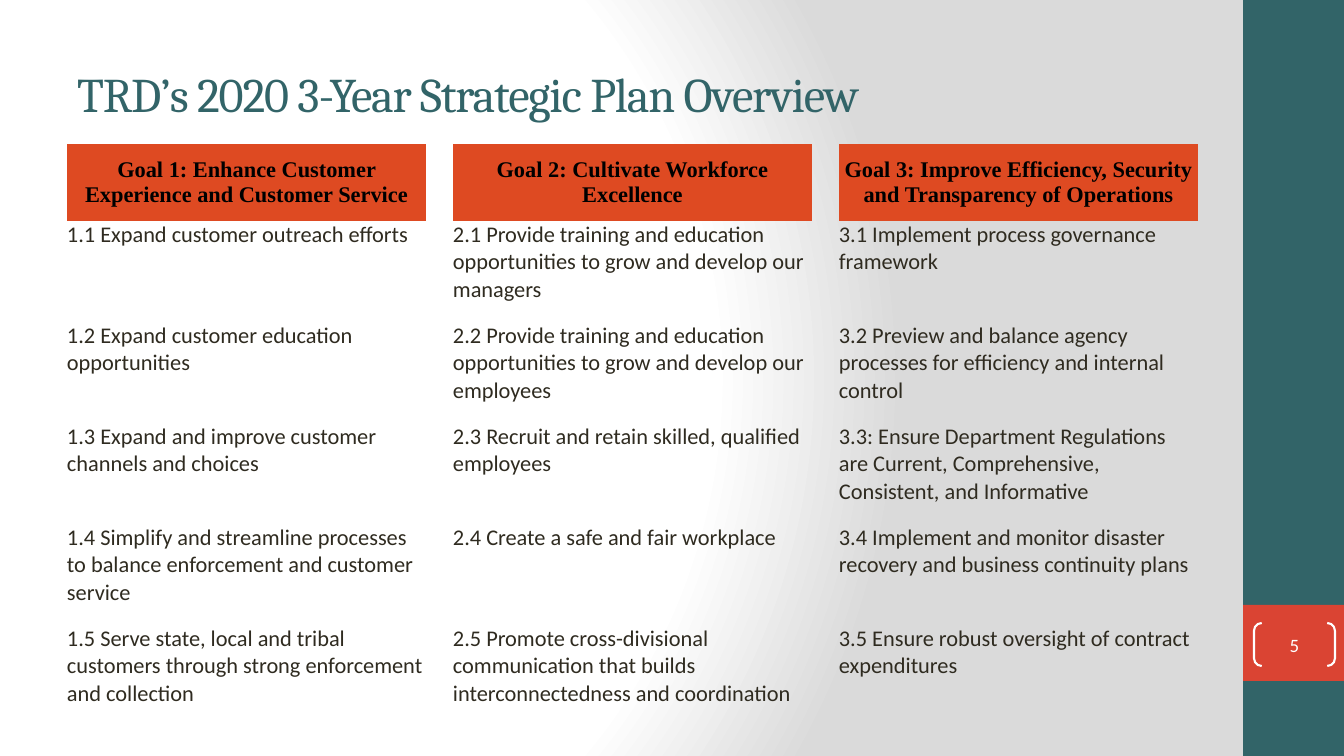
from lxml import etree
from pptx import Presentation
from pptx.dml.color import RGBColor
from pptx.enum.shapes import MSO_SHAPE as SHAPE
from pptx.enum.text import MSO_ANCHOR as ANCHOR, MSO_AUTO_SIZE as AUTO, PP_ALIGN as ALIGN
from pptx.oxml import parse_xml
from pptx.oxml.ns import nsdecls, qn
from pptx.util import Emu, Pt

EMU_PER_PX = 914400 / 100.8
NO_STYLE = "{2D5ABB26-0587-4C30-8999-92F81FD0307C}"
COLORS = {
    "teal": "326468", "red": "DA4433", "orange": "DE4A22",
    "ink": "2F2B20", "black": "000000", "white": "FFFFFF", "grey": "DADADA",
}
GOALS = [
    ("Goal 1: Enhance Customer Experience and Customer Service", [
        "1.1 Expand customer outreach efforts",
        "1.2 Expand customer education opportunities",
        "1.3 Expand and improve customer channels and choices",
        "1.4 Simplify and streamline processes to balance enforcement and customer service",
        "1.5 Serve state, local and tribal customers through strong enforcement and collection",
    ]),
    ("Goal 2: Cultivate Workforce Excellence", [
        "2.1 Provide training and education opportunities to grow and develop our managers",
        "2.2 Provide training and education opportunities to grow and develop our employees",
        "2.3 Recruit and retain skilled, qualified employees",
        "2.4 Create a safe and fair workplace",
        "2.5 Promote cross-divisional communication that builds interconnectedness and coordination",
    ]),
    ("Goal 3: Improve Efficiency, Security and Transparency of Operations", [
        "3.1 Implement process governance framework",
        "3.2 Preview and balance agency processes for efficiency and internal control",
        "3.3: Ensure Department Regulations are Current, Comprehensive, Consistent, and Informative",
        "3.4 Implement and monitor disaster recovery and business continuity plans",
        "3.5 Ensure robust oversight of contract expenditures",
    ]),
]


def px(n):
    return Emu(round(n * EMU_PER_PX))


def rgb(name):
    return RGBColor.from_string(COLORS[name])


def write(tf, text, size=16, font="Calibri", color="ink", bold=False,
          align=ALIGN.LEFT, spacing=None):
    p = tf.paragraphs[0]
    p.alignment = align
    r = p.add_run()
    r.text = text
    r.font.size, r.font.name, r.font.bold = Pt(size), font, bold
    r.font.color.rgb = rgb(color)
    if spacing is not None:
        r.font._element.set("spc", str(spacing))


class Deck:
    """Holds the presentation and the slide being drawn."""

    def __init__(self, width, height):
        self.prs = Presentation()
        self.prs.slide_width, self.prs.slide_height = px(width), px(height)
        self.s = self.prs.slides.add_slide(self.prs.slide_layouts[5])

    def background(self, stops):
        """Fill the slide with a circular gradient of (percent, color) stops."""
        self.s.background.fill.solid()
        solid = self.s.element.xpath(".//p:bgPr/a:solidFill")[0]
        grad = parse_xml(
            f'<a:gradFill {nsdecls("a")} rotWithShape="1"><a:gsLst/><a:path path="circle">'
            '<a:fillToRect l="20000" t="50000" r="100000" b="50000"/></a:path></a:gradFill>')
        for percent, color in stops:
            gs = etree.SubElement(grad[0], qn("a:gs"), pos=str(percent * 1000))
            etree.SubElement(gs, qn("a:srgbClr"), val=COLORS[color])
        solid.getparent().replace(solid, grad)

    def title(self, text, x, y, w, h):
        sp = self.s.shapes.title
        sp.left, sp.top, sp.width, sp.height = map(px, (x, y, w, h))
        tf = sp.text_frame
        tf.word_wrap, tf.auto_size = True, AUTO.NONE
        tf.vertical_anchor = ANCHOR.MIDDLE
        write(tf, text, size=34.5, font="Cambria", color="teal", spacing=-80)

    def shape(self, kind, x, y, w, h, fill=None, line=None):
        sp = self.s.shapes.add_shape(kind, *map(px, (x, y, w, h)))
        sp.shadow.inherit = False
        if fill:
            sp.fill.solid()
            sp.fill.fore_color.rgb = rgb(fill)
        else:
            sp.fill.background()
        if line:
            sp.line.color.rgb, sp.line.width = rgb(line), Pt(1.5)
        else:
            sp.line.fill.background()
        return sp

    def page_number(self, number, x, y, w, h):
        sp = self.shape(SHAPE.DOUBLE_BRACKET, x, y, w, h, line="white")
        sp.adjustments[0] = 0.18
        tf = sp.text_frame
        tf.margin_left = tf.margin_right = tf.margin_top = tf.margin_bottom = 0
        tf.vertical_anchor = ANCHOR.MIDDLE
        write(tf, number, size=13.5, color="white", align=ALIGN.CENTER)

    def goal_table(self, goals, x, y, col_w, gap_w, head_h, row_h):
        """Put each goal in a column, with narrow empty columns between them."""
        widths = ([col_w, gap_w] * len(goals))[:-1]
        heights = [head_h] + [row_h] * len(goals[0][1])
        frame = self.s.shapes.add_table(len(heights), len(widths), px(x), px(y),
                                        px(sum(widths)), px(sum(heights)))
        frame.element.xpath(".//a:tableStyleId")[0].text = NO_STYLE
        table = frame.table
        table.first_row = table.horz_banding = False
        for col, width in zip(table.columns, widths):
            col.width = px(width)
        for row, height in zip(table.rows, heights):
            row.height = px(height)
        for cell in table.iter_cells():
            cell.margin_left = cell.margin_right = cell.margin_top = cell.margin_bottom = 0
            cell.fill.background()
        for i, (goal, objectives) in enumerate(goals):
            head = table.cell(0, 2 * i)
            head.fill.solid()
            head.fill.fore_color.rgb = rgb("orange")
            head.vertical_anchor = ANCHOR.MIDDLE
            write(head.text_frame, goal, font="Times New Roman", color="black",
                  bold=True, align=ALIGN.CENTER)
            for j, objective in enumerate(objectives, 1):
                write(table.cell(j, 2 * i).text_frame, objective)


def main():
    deck = Deck(1344, 756)
    deck.background([(0, "white"), (75, "white"), (100, "grey")])
    deck.shape(SHAPE.RECTANGLE, 1243, 0, 101, 756, fill="teal")
    deck.shape(SHAPE.RECTANGLE, 1243, 605, 101, 76, fill="red")
    deck.title("TRD’s 2020 3-Year Strategic Plan Overview", 67, 30, 1120, 126)
    deck.goal_table(GOALS, 67, 144, col_w=359, gap_w=27, head_h=77, row_h=101)
    deck.page_number("5", 1254, 623, 81, 43)
    deck.prs.save("out.pptx")


if __name__ == "__main__":
    main()
